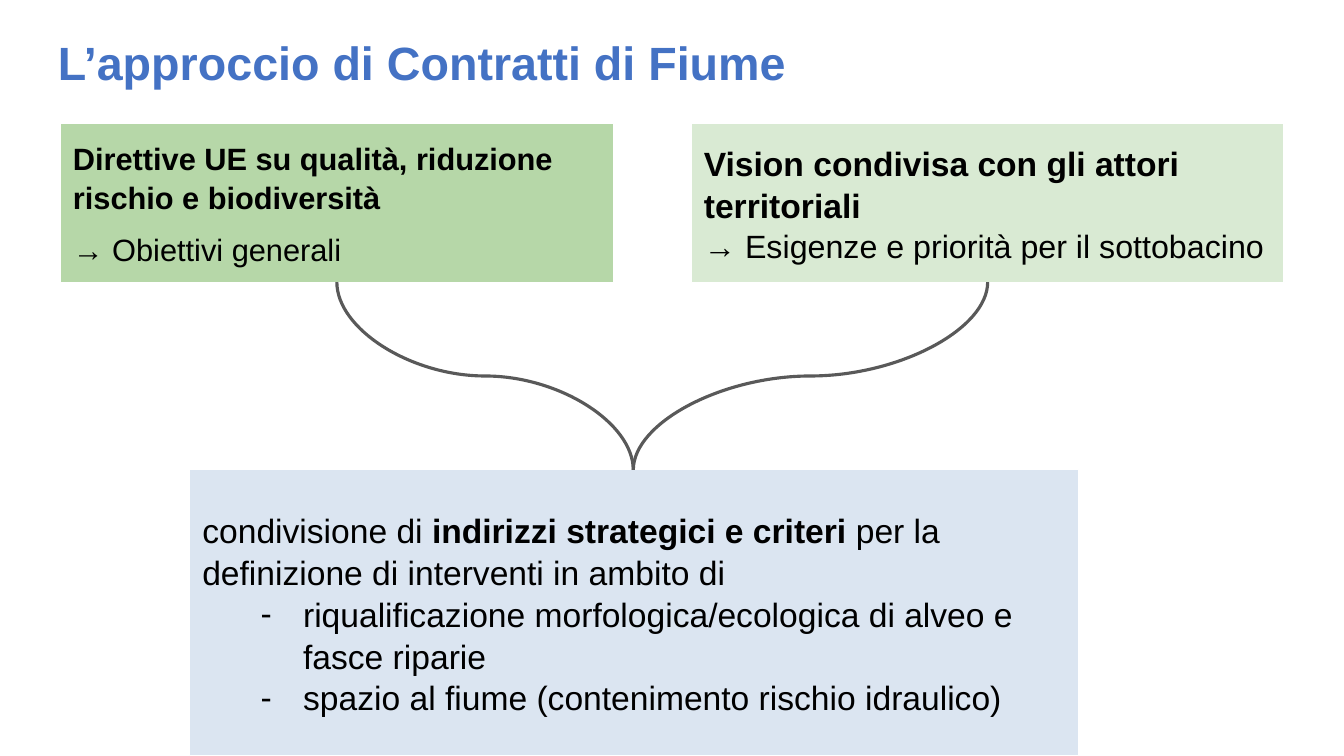
from dataclasses import dataclass

from lxml import etree
from pptx import Presentation
from pptx.dml.color import RGBColor
from pptx.enum import shapes, text
from pptx.oxml import ns
from pptx.util import Cm, Pt


@dataclass(frozen=True)
class Theme:
    font: str = "Arial"
    title: str = "4472C4"
    ink: str = "000000"
    edge: str = "FFFFFF"
    curve: str = "595959"
    directives: str = "B6D7A8"
    vision: str = "D9EAD3"
    guidelines: str = "DBE5F1"
    title_size: float = 33.3
    large: float = 24
    medium: float = 23
    small: float = 22
    spacing: float = 1.04


T = Theme()


def set_frame(tf):
    frame = dict(word_wrap=True, vertical_anchor=text.MSO_ANCHOR.MIDDLE,
                 auto_size=text.MSO_AUTO_SIZE.NONE,
                 margin_left=Cm(0.32), margin_right=Cm(0.32),
                 margin_top=Cm(0.32), margin_bottom=Cm(0.32))
    for name, value in frame.items():
        setattr(tf, name, value)


def add_runs(p, runs, color):
    p.alignment = text.PP_ALIGN.LEFT
    p.line_spacing = T.spacing
    for words, size, bold in runs:
        r = p.add_run()
        r.text = words
        for name, value in dict(name=T.font, size=Pt(size), bold=bold).items():
            setattr(r.font, name, value)
        r.font.color.rgb = RGBColor.from_string(color)


prs = Presentation()
prs.slide_width, prs.slide_height = Cm(33.87), Cm(19.05)
s = prs.slides.add_slide(prs.slide_layouts[5])

# Title
title = s.shapes.title
title.left, title.top, title.width, title.height = Cm(1.14), Cm(0.48), Cm(31.55), Cm(2.11)
set_frame(title.text_frame)
add_runs(title.text_frame.paragraphs[0],
         [("L’approccio di Contratti di Fiume", T.title_size, True)], T.title)

# Boxes: position, fill, space before, paragraphs as (bulleted, runs)
top_y, top_h, goal_y = 3.12, 3.99, 11.84
boxes = [
    ((1.52, top_y, 13.94, top_h), T.directives, 10, [
        (False, [("Direttive UE su qualità, riduzione rischio e biodiversità", T.small, True)]),
        (False, [("→ Obiettivi generali", T.small, False)]),
    ]),
    ((17.42, top_y, 14.94, top_h), T.vision, 0, [
        (False, [("Vision condivisa con gli attori territoriali", T.large, True)]),
        (False, [("→ Esigenze e priorità per il sottobacino", T.medium, False)]),
    ]),
    ((4.78, goal_y, 22.4, 7.21), T.guidelines, 0, [
        (False, [("condivisione di ", T.large, False),
                 ("indirizzi strategici e criteri", T.large, True),
                 (" per la definizione di interventi in ambito di", T.large, False)]),
        (True, [("riqualificazione morfologica/ecologica di alveo e fasce riparie",
                 T.large, False)]),
        (True, [("spazio al fiume (contenimento rischio idraulico)", T.large, False)]),
    ]),
]
for place, fill, before, paragraphs in boxes:
    box = s.shapes.add_shape(shapes.MSO_SHAPE.RECTANGLE, *map(Cm, place))
    box.shadow.inherit = False
    box.fill.solid()
    box.fill.fore_color.rgb = RGBColor.from_string(fill)
    box.line.color.rgb = RGBColor.from_string(T.edge)
    box.line.width = Pt(0.75)
    tf = box.text_frame
    set_frame(tf)
    for i, (bulleted, runs) in enumerate(paragraphs):
        p = tf.add_paragraph() if i else tf.paragraphs[0]
        p.space_before = Pt(before)
        add_runs(p, runs, T.ink)
        if bulleted:
            p.level = 1
            pPr = p._p.get_or_add_pPr()
            pPr.set("marL", str(Cm(2.54)))
            pPr.set("indent", str(-Cm(1.07)))
            color = etree.SubElement(pPr, ns.qn("a:buClr"))
            etree.SubElement(color, ns.qn("a:srgbClr")).set("val", T.ink)
            etree.SubElement(pPr, ns.qn("a:buFont")).set("typeface", T.font)
            etree.SubElement(pPr, ns.qn("a:buChar")).set("char", "-")

# Curves from the two upper boxes to the lower one, as quarter-turned connectors
goal_x, start_y = 15.96, top_y + top_h
for start_x, angle, flipped in [(8.49, 270, True), (24.89, 90, False)]:
    drop, run = goal_y - start_y, abs(goal_x - start_x)
    mid_x, mid_y = (start_x + goal_x) / 2, (start_y + goal_y) / 2
    left, right = mid_x - drop / 2, mid_x + drop / 2
    if flipped:
        left, right = right, left
    curve = s.shapes.add_connector(shapes.MSO_CONNECTOR.CURVE, Cm(left), Cm(mid_y - run / 2),
                                   Cm(right), Cm(mid_y + run / 2))
    curve.line.color.rgb = RGBColor.from_string(T.curve)
    curve.line.width = Pt(2.25)
    spPr = curve._element.spPr
    spPr.find(ns.qn("a:xfrm")).set("rot", str(angle * 60000))
    etree.SubElement(spPr, ns.qn("a:effectLst"))

prs.save("out.pptx")
